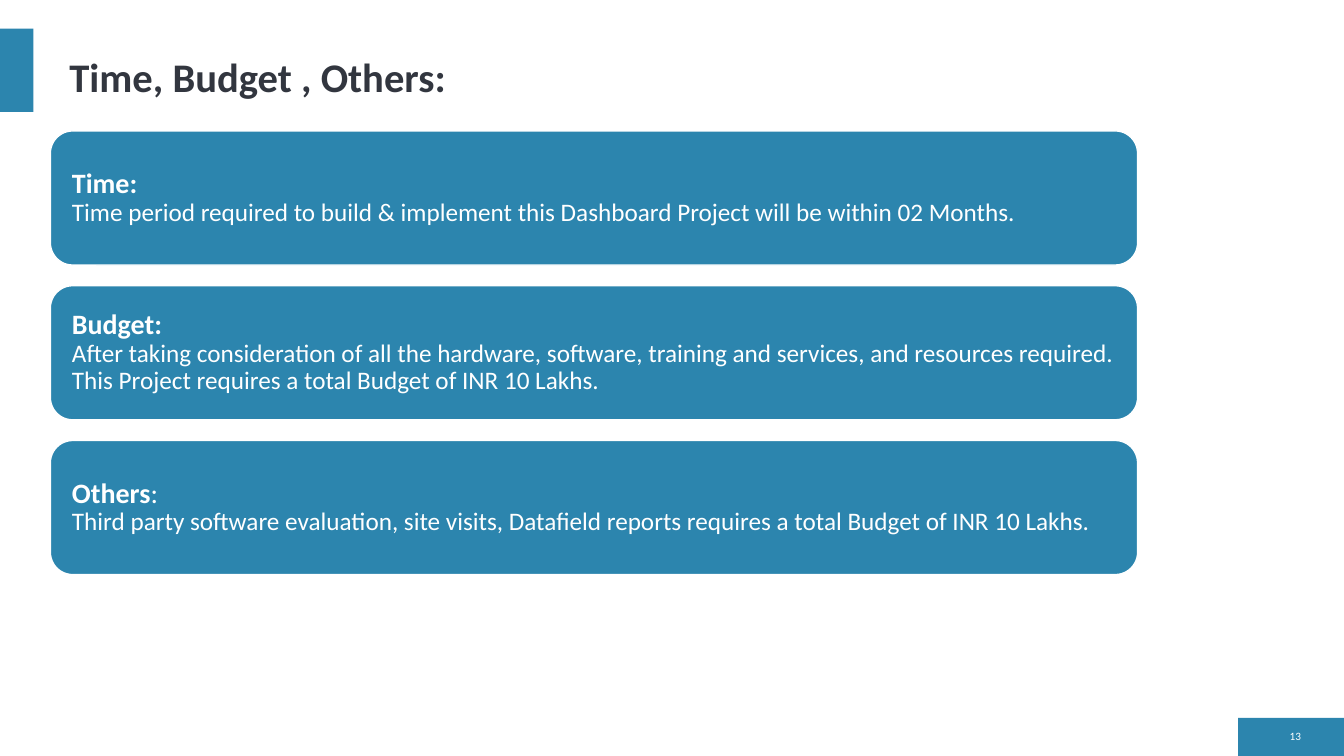
from pptx import Presentation
from pptx.dml.color import RGBColor
from pptx.enum.shapes import MSO_SHAPE
from pptx.enum.text import MSO_ANCHOR, PP_ALIGN
from pptx.util import Cm, Pt

TITLE = "Time, Budget , Others:"
PAGE_NUMBER = "13"
# Each card is a list of lines; each line is a list of (text, size, bold) runs
CARDS = [
    [[("Time:", 20, True)],
     [("Time period required to build & implement this Dashboard Project "
       "will be within 02 Months.", 18, False)]],
    [[("Budget:", 20, True)],
     [("After taking consideration of all the hardware, software, training and "
       "services, and resources required. This Project requires a total Budget "
       "of INR 10 Lakhs.", 18, False)]],
    [[("Others", 20, True), (":", 20, False)],
     [("Third party software evaluation, site visits, Datafield reports "
       "requires a total Budget of INR 10 Lakhs.", 18, False)]],
]

COLORS = {"accent": "2C85AE", "dark": "32363F", "white": "FFFFFF"}
FONT = "Calibri"
SLIDE_W, SLIDE_H = 33.87, 19.05
CARD_LEFT, CARD_TOP, CARD_W, CARD_H = 1.27, 3.3, 27.4, 3.38
CARD_STEP = 3.9
CARD_INSET = 0.38


def color(name):
    return RGBColor.from_string(COLORS[name])


def add_block(slide, kind, left, top, width, height, line=None):
    sp = slide.shapes.add_shape(kind, Cm(left), Cm(top), Cm(width), Cm(height))
    sp.shadow.inherit = False
    sp.fill.solid()
    sp.fill.fore_color.rgb = color("accent")
    if line:
        sp.line.color.rgb = color(line)
        sp.line.width = Pt(1)
    else:
        sp.line.fill.background()
    return sp


def write(tf, lines, fill="white", align=PP_ALIGN.LEFT, anchor=MSO_ANCHOR.MIDDLE):
    """Fill a text frame with one paragraph whose lines are split by breaks."""
    tf.word_wrap = True
    tf.vertical_anchor = anchor
    p = tf.paragraphs[0]
    p.alignment = align
    p.line_spacing = 0.9
    for i, runs in enumerate(lines):
        if i:
            p.add_line_break()
        for text, size, bold in runs:
            r = p.add_run()
            r.text = text
            r.font.name = FONT
            r.font.size = Pt(size)
            r.font.bold = bold
            r.font.color.rgb = color(fill)


def add_label(slide, left, top, width, height, text, size, bold=False, **fmt):
    box = slide.shapes.add_textbox(Cm(left), Cm(top), Cm(width), Cm(height))
    write(box.text_frame, [[(text, size, bold)]], **fmt)


def add_card(slide, top, lines):
    sp = add_block(slide, MSO_SHAPE.ROUNDED_RECTANGLE,
                   CARD_LEFT, top, CARD_W, CARD_H, line="white")
    tf = sp.text_frame
    tf.margin_left = tf.margin_right = Cm(CARD_INSET)
    tf.margin_top = tf.margin_bottom = Cm(CARD_INSET)
    write(tf, lines)


def main():
    prs = Presentation()
    prs.slide_width, prs.slide_height = Cm(SLIDE_W), Cm(SLIDE_H)
    slide = prs.slides.add_slide(prs.slide_layouts[6])

    add_block(slide, MSO_SHAPE.RECTANGLE, 31.2, 18.09, SLIDE_W - 31.2, SLIDE_H - 18.09)
    add_block(slide, MSO_SHAPE.RECTANGLE, 0, 0.72, 0.84, 2.1)
    add_label(slide, 1.5, 1.07, 10.92, 1.6, TITLE, 29, bold=True,
              fill="dark", anchor=MSO_ANCHOR.BOTTOM)
    add_label(slide, 32, 18.29, 1.04, 0.58, PAGE_NUMBER, 8, align=PP_ALIGN.RIGHT)
    for i, lines in enumerate(CARDS):
        add_card(slide, CARD_TOP + i * CARD_STEP, lines)

    prs.save("out.pptx")


if __name__ == "__main__":
    main()
